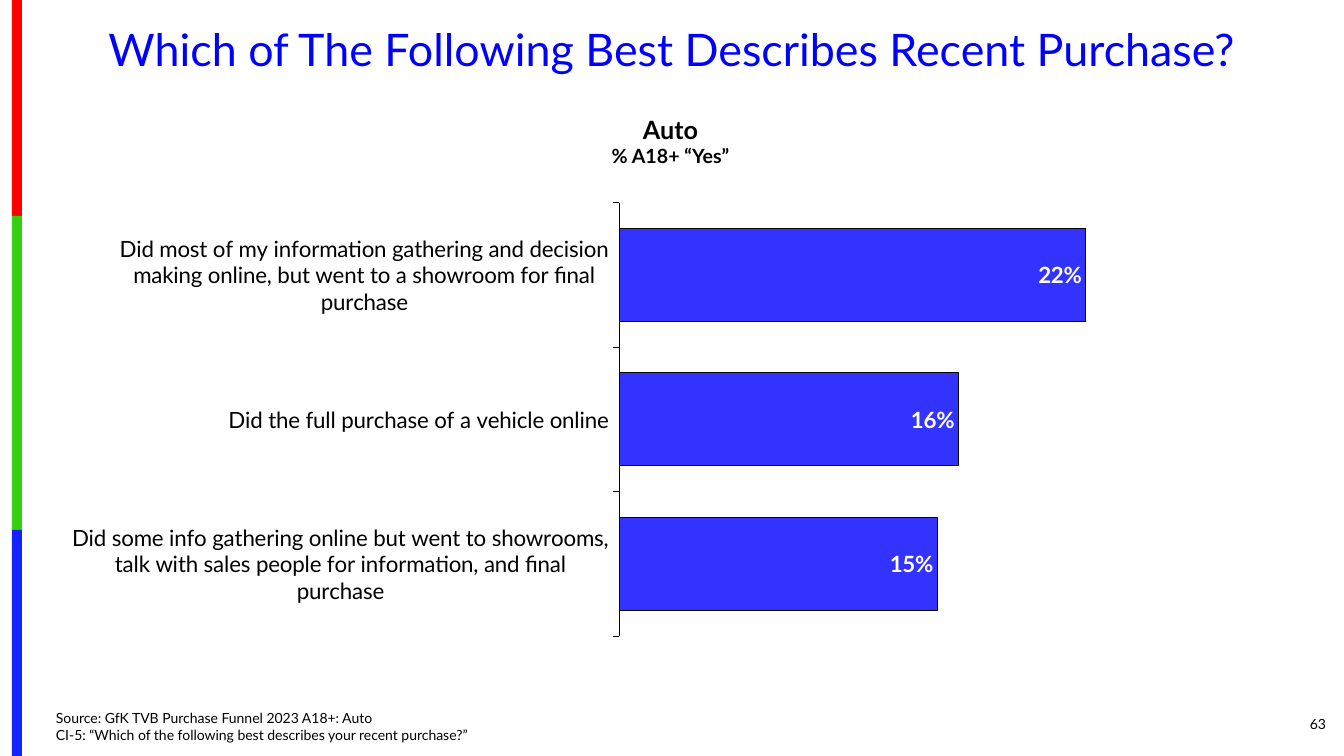
import pptx
import pptx.chart.data
import pptx.dml.color
import pptx.enum.chart
import pptx.enum.shapes
import pptx.enum.text
import pptx.oxml
import pptx.oxml.ns
import pptx.util

PX = 914400 / 100.8
FONT = "Lato"

RGBColor = pptx.dml.color.RGBColor
BLACK = RGBColor(0x00, 0x00, 0x00)
WHITE = RGBColor(0xFF, 0xFF, 0xFF)
TITLE_BLUE = RGBColor(0x00, 0x00, 0xFF)
BAR_BLUE = RGBColor(0x33, 0x33, 0xFF)
STRIP_RED = RGBColor(0xFE, 0x00, 0x00)
STRIP_GREEN = RGBColor(0x36, 0xCF, 0x12)
STRIP_BLUE = RGBColor(0x13, 0x22, 0xFE)

ALIGN = pptx.enum.text.PP_ALIGN
ANCHOR = pptx.enum.text.MSO_ANCHOR

ANSWERS = {
    "Did most of my information gathering and decision making online, "
    "but went to a showroom for final purchase": 0.22,
    "Did the full purchase of a vehicle online": 0.16,
    "Did some info gathering online but went to showrooms, "
    "talk with sales people for information, and final purchase": 0.15,
}


def px(length):
    return pptx.util.Emu(round(length * PX))


def frame(left, top, width, height):
    return px(left), px(top), px(width), px(height)


def style_font(font, size, color=BLACK, bold=False):
    font.name = FONT
    font.size = pptx.util.Pt(size)
    font.color.rgb = color
    font.bold = bold


def add_text(page, place, *lines, align=ALIGN.LEFT, anchor=ANCHOR.TOP,
             color=BLACK, bold=False, wrap=True, spacing=None):
    """Add a text box; each line is a (text, size) paragraph, \\v breaks a line."""
    box = page.shapes.add_textbox(*frame(*place))
    text_frame = box.text_frame
    text_frame.word_wrap = wrap
    text_frame.vertical_anchor = anchor
    for index, (text, size) in enumerate(lines):
        para = text_frame.add_paragraph() if index else text_frame.paragraphs[0]
        para.text = text
        para.alignment = align
        para.line_spacing = spacing
        for span in para.runs:
            style_font(span.font, size, color, bold)


def add_side_strips(page):
    top = 0
    for color, bottom in ((STRIP_RED, 216), (STRIP_GREEN, 530), (STRIP_BLUE, 756)):
        strip = page.shapes.add_shape(
            pptx.enum.shapes.MSO_SHAPE.RECTANGLE, *frame(12, top, 10, bottom - top))
        strip.shadow.inherit = False
        strip.fill.solid()
        strip.fill.fore_color.rgb = color
        strip.line.fill.background()
        top = bottom


def set_outline(line):
    line.color.rgb = BLACK
    line.width = pptx.util.Pt(0.75)


def set_plot_area(chart, **fractions):
    """Fix the inner plot area, in fractions of the chart frame."""
    sizes = "".join(f'<c:{key} val="{value}"/>' for key, value in fractions.items())
    layout = pptx.oxml.parse_xml(
        f'<c:layout {pptx.oxml.ns.nsdecls("c")}><c:manualLayout>'
        '<c:layoutTarget val="inner"/><c:xMode val="edge"/><c:yMode val="edge"/>'
        f'{sizes}</c:manualLayout></c:layout>')
    plot_area = chart.plots[0]._element.getparent()
    for old in plot_area.findall(pptx.oxml.ns.qn("c:layout")):
        plot_area.remove(old)
    plot_area.insert(0, layout)


def add_answer_chart(page, place):
    data = pptx.chart.data.CategoryChartData(number_format="0%")
    data.categories = ANSWERS.keys()
    data.add_series("Series 1", ANSWERS.values())
    chart = page.shapes.add_chart(
        pptx.enum.chart.XL_CHART_TYPE.BAR_CLUSTERED, *frame(*place), data).chart
    chart.has_legend = False
    chart.has_title = False
    style_font(chart.font, 10)
    set_plot_area(chart, x=0.45, y=0.04, w=0.44, h=0.92)

    answers = chart.category_axis
    answers.reverse_order = True
    answers.has_major_gridlines = False
    answers.major_tick_mark = pptx.enum.chart.XL_TICK_MARK.OUTSIDE
    answers.minor_tick_mark = pptx.enum.chart.XL_TICK_MARK.NONE
    set_outline(answers.format.line)
    style_font(answers.tick_labels.font, 16)

    shares = chart.value_axis
    shares.visible = False
    shares.has_major_gridlines = False
    shares.minimum_scale = 0
    shares.maximum_scale = 0.25
    shares.major_unit = 0.1

    plot = chart.plots[0]
    plot.gap_width = 55
    plot.vary_by_categories = False
    bars = plot.series[0]
    bars.format.fill.solid()
    bars.format.fill.fore_color.rgb = BAR_BLUE
    set_outline(bars.format.line)
    labels = bars.data_labels
    labels.show_value = True
    labels.number_format = "0%"
    labels.number_format_is_linked = False
    labels.position = pptx.enum.chart.XL_LABEL_POSITION.INSIDE_END
    style_font(labels.font, 16, WHITE, bold=True)


def main():
    deck = pptx.Presentation()
    deck.slide_width = px(1344)
    deck.slide_height = px(756)
    page = deck.slides.add_slide(deck.slide_layouts[6])

    add_side_strips(page)
    add_text(page, (46, 23, 1252, 60),
             ("Which of The Following Best Describes Recent Purchase?", 32),
             align=ALIGN.CENTER, color=TITLE_BLUE, spacing=0.9)
    add_text(page, (1227, 704, 109, 40), ("63", 10),
             align=ALIGN.RIGHT, anchor=ANCHOR.MIDDLE)
    add_text(page, (46, 704, 953, 44),
             ("Source: GfK TVB Purchase Funnel 2023 A18+: Auto\v"
              "CI-5: “Which of the following best describes your recent purchase?”", 10),
             anchor=ANCHOR.BOTTOM)
    add_answer_chart(page, (72, 184, 1210, 471))
    add_text(page, (588, 109, 165, 65), ("Auto", 18), ("% A18+ “Yes”", 14),
             align=ALIGN.CENTER, bold=True, wrap=False)

    deck.save("out.pptx")


if __name__ == "__main__":
    main()
